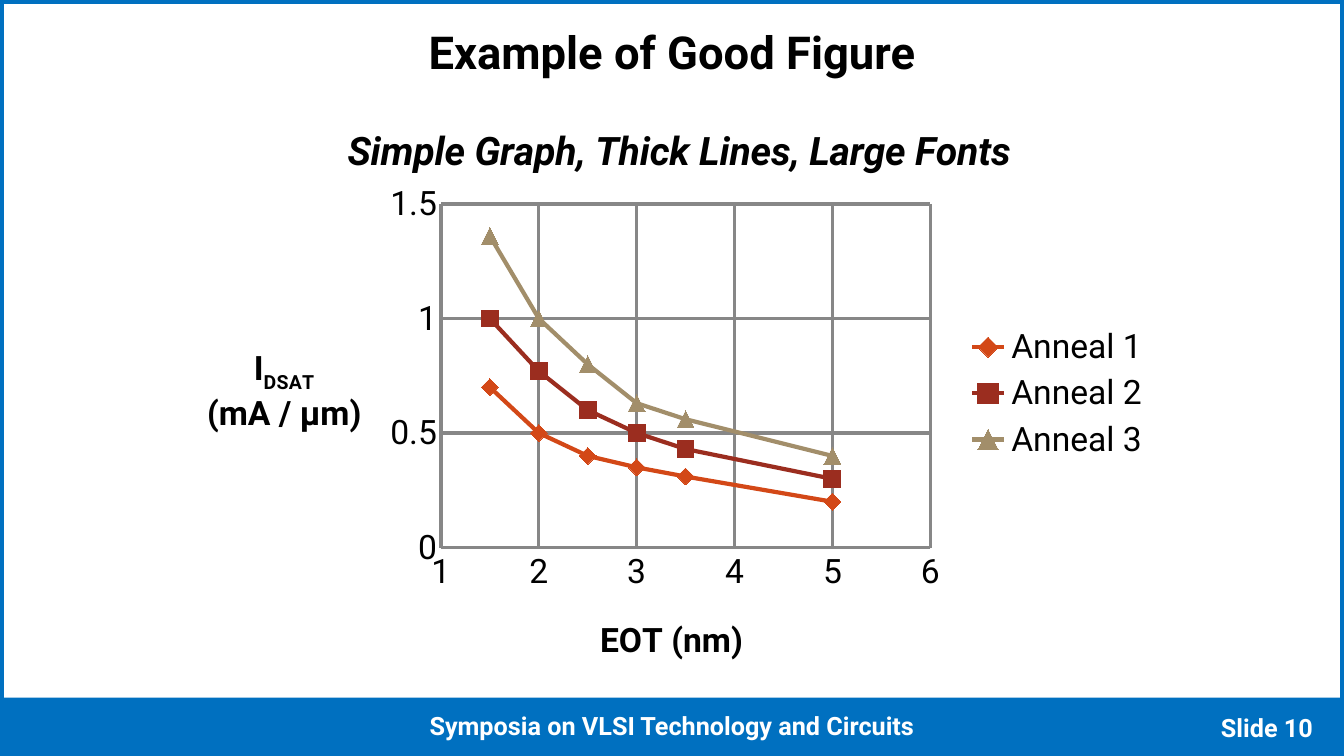
from lxml import etree
from pptx import Presentation
from pptx.chart.data import XyChartData
from pptx.dml.color import RGBColor
from pptx.enum.chart import (XL_CHART_TYPE, XL_LEGEND_POSITION, XL_MARKER_STYLE,
                             XL_TICK_MARK)
from pptx.enum.shapes import MSO_SHAPE
from pptx.enum.text import MSO_ANCHOR, PP_ALIGN
from pptx.oxml.ns import qn
from pptx.util import Inches, Pt

SCATTER = XL_CHART_TYPE.XY_SCATTER_LINES
LEGEND_RIGHT = XL_LEGEND_POSITION.RIGHT
NO_TICK = XL_TICK_MARK.NONE
RECTANGLE = MSO_SHAPE.RECTANGLE
TOP, MIDDLE = MSO_ANCHOR.TOP, MSO_ANCHOR.MIDDLE
CENTER, RIGHT = PP_ALIGN.CENTER, PP_ALIGN.RIGHT

BLUE = RGBColor(0x00, 0x70, 0xC0)
WHITE = RGBColor(0xFF, 0xFF, 0xFF)
BLACK = RGBColor(0x00, 0x00, 0x00)
GRID_GRAY = RGBColor(0x87, 0x87, 0x87)
FONT = "Roboto"
WIDTH, HEIGHT = 13.33, 7.5

EOT = (1.5, 2, 2.5, 3, 3.5, 5)
ANNEALS = (
    ("Anneal 1", (0.7, 0.5, 0.4, 0.35, 0.31, 0.2),
     RGBColor(0xD3, 0x48, 0x17), XL_MARKER_STYLE.DIAMOND),
    ("Anneal 2", (1, 0.77, 0.6, 0.5, 0.43, 0.3),
     RGBColor(0x9B, 0x2D, 0x1F), XL_MARKER_STYLE.SQUARE),
    ("Anneal 3", (1.36, 1, 0.8, 0.63, 0.56, 0.4),
     RGBColor(0xA2, 0x8E, 0x6A), XL_MARKER_STYLE.TRIANGLE),
)


def style_font(font, size, color=BLACK, bold=True, italic=False):
    font.name, font.size = FONT, Pt(size)
    font.bold, font.italic = bold, italic
    font.color.rgb = color


def add_label(slide, box, text, size, color, align, anchor):
    label = slide.shapes.add_textbox(*map(Inches, box)).text_frame
    label.word_wrap = True
    label.vertical_anchor = anchor
    label.text = text
    paragraph = label.paragraphs[0]
    paragraph.alignment = align
    style_font(paragraph.runs[0].font, size, color)


def add_frame(slide, left, top, width, height):
    """Blue border around the slide."""
    frame = slide.shapes.add_shape(
        RECTANGLE, *map(Inches, (left, top, width, height)))
    frame.shadow.inherit = False
    frame.fill.background()
    frame.line.color.rgb = BLUE
    frame.line.width = Pt(6)


def add_footer(slide, left, top, width, height):
    band = slide.shapes.add_shape(
        RECTANGLE, *map(Inches, (left, top, width, height)))
    band.shadow.inherit = False
    band.fill.solid()
    band.fill.fore_color.rgb = BLUE
    band.line.fill.background()
    add_label(slide, (left + 2, top + 0.08, width - 4, 0.4),
              "Symposia on VLSI Technology and Circuits", 18, WHITE, CENTER, TOP)
    add_label(slide, (left + width - 3.77, top + 0.1, 3.56, 0.4),
              "Slide 10", 18, WHITE, RIGHT, MIDDLE)


def place(element, index, **fractions):
    """Fix a chart part at fractions of the chart's size."""
    for automatic in element.findall(qn("c:layout")):
        element.remove(automatic)
    layout = etree.Element(qn("c:layout"))
    manual = etree.SubElement(layout, qn("c:manualLayout"))
    if element.tag == qn("c:plotArea"):
        etree.SubElement(manual, qn("c:layoutTarget")).set("val", "inner")
    for side in ("x", "y"):
        etree.SubElement(manual, qn(f"c:{side}Mode")).set("val", "edge")
    for name, fraction in fractions.items():
        etree.SubElement(manual, qn(f"c:{name}")).set("val", str(fraction))
    element.insert(index, layout)


def style_axis(axis, low, high, step):
    axis.minimum_scale, axis.maximum_scale, axis.major_unit = low, high, step
    axis.major_tick_mark = axis.minor_tick_mark = NO_TICK
    axis.has_major_gridlines = True
    axis.tick_labels.number_format = "General"
    axis.tick_labels.number_format_is_linked = False
    for line, weight in ((axis.major_gridlines.format.line, 2.25),
                         (axis.format.line, 1.5)):
        line.color.rgb = GRID_GRAY
        line.width = Pt(weight)


def write_title(title, lines, size, x, y, italic=False):
    """Fill a chart or axis title; each line is a tuple of runs."""
    frame = title.text_frame
    for number, pieces in enumerate(lines):
        paragraph = frame.add_paragraph() if number else frame.paragraphs[0]
        paragraph.alignment = CENTER
        for piece in pieces:
            run = paragraph.add_run()
            run.text = piece
            style_font(run.font, size, italic=italic)
    next(title._element.iter(qn("a:bodyPr"))).set("rot", "0")
    place(title._element, 1, x=x, y=y)
    return frame


def add_anneal_chart(slide, left, top, width, height):
    data = XyChartData()
    for name, currents, _, _ in ANNEALS:
        series = data.add_series(name)
        for thickness, current in zip(EOT, currents):
            series.add_data_point(thickness, current)
    chart = slide.shapes.add_chart(
        SCATTER, *map(Inches, (left, top, width, height)), data).chart
    style_font(chart.font, 24, bold=False)
    place(chart._chartSpace.chart.plotArea, 0, x=0.263, y=0.178, w=0.502, h=0.593)

    chart.has_title = True
    write_title(chart.chart_title, [("Simple Graph, Thick Lines, Large Fonts",)],
                28, 0.16, 0.03, italic=True)
    style_axis(chart.category_axis, 1, 6, 1)
    write_title(chart.category_axis.axis_title, [("EOT (nm)",)], 24, 0.42, 0.88)
    style_axis(chart.value_axis, 0, 1.5, 0.5)
    current_title = write_title(chart.value_axis.axis_title,
                                [("I", "DSAT"), ("(mA / µm)",)], 24, 0.02, 0.42)
    subscript = current_title.paragraphs[0].runs[1]
    subscript.font._element.set("baseline", "-25000")

    chart.has_legend = True
    chart.legend.position = LEGEND_RIGHT
    chart.legend.include_in_layout = False
    style_font(chart.legend.font, 24, bold=False)
    place(chart.legend._element, 1, x=0.8, y=0.38, w=0.19, h=0.25)

    chart.plots[0].vary_by_categories = False
    for series, (_, _, color, marker_style) in zip(chart.plots[0].series, ANNEALS):
        series.smooth = False
        series.format.line.color.rgb = color
        series.format.line.width = Pt(3)
        marker = series.marker
        marker.style, marker.size = marker_style, 12
        marker.format.fill.solid()
        marker.format.fill.fore_color.rgb = color
        marker.format.line.fill.background()


def main():
    deck = Presentation()
    deck.slide_width, deck.slide_height = Inches(WIDTH), Inches(HEIGHT)
    slide = deck.slides.add_slide(deck.slide_layouts[6])
    add_footer(slide, 0, 6.92, WIDTH, 0.58)
    add_frame(slide, 0, 0, WIDTH, HEIGHT)
    add_label(slide, (0.22, 0.17, 12.89, 0.67), "Example of Good Figure",
              32.4, BLACK, CENTER, MIDDLE)
    add_anneal_chart(slide, 1.83, 1, 9.67, 5.75)
    deck.save("out.pptx")


if __name__ == "__main__":
    main()
